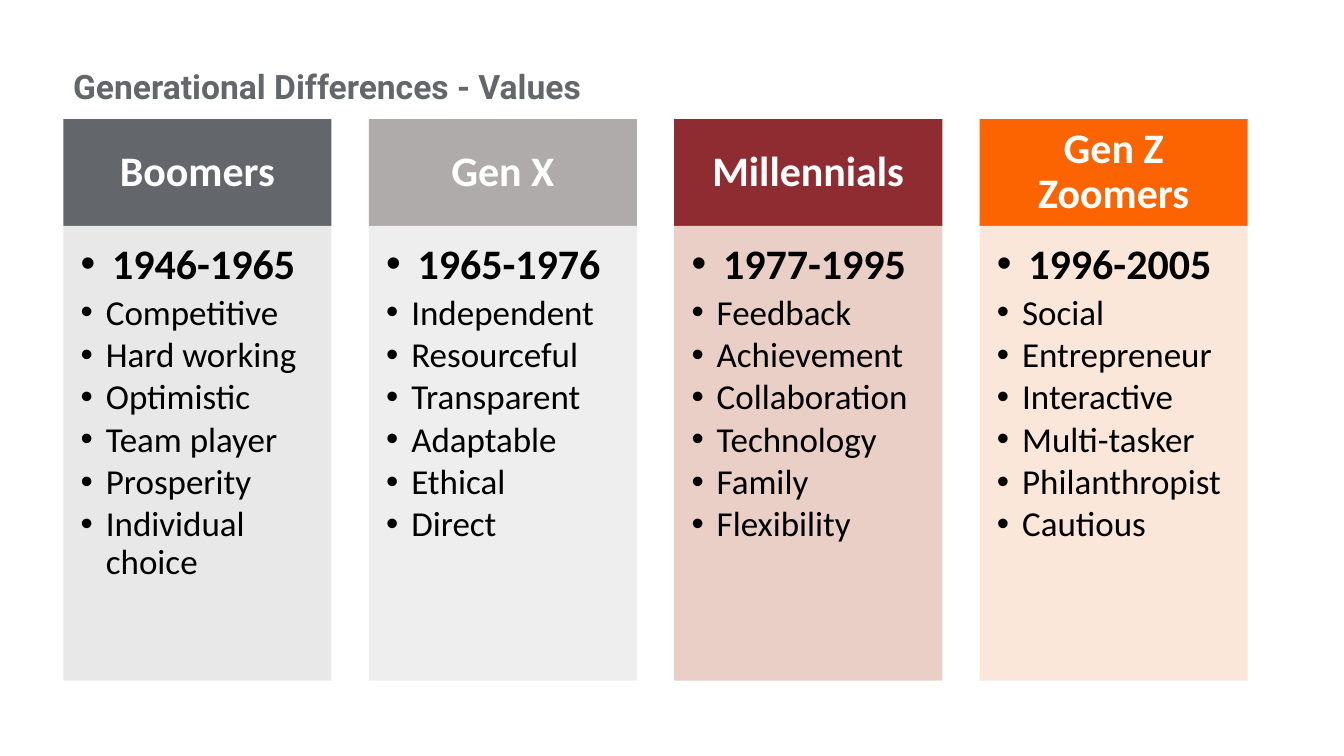
from dataclasses import dataclass
from typing import Any

from lxml.etree import SubElement as Sub
from pptx import Presentation as Deck
from pptx.dml.color import RGBColor as Rgb
from pptx.enum.shapes import MSO_SHAPE as Shape
from pptx.enum.text import MSO_ANCHOR as Anchor, MSO_AUTO_SIZE as Auto, PP_ALIGN as Align
from pptx.oxml.ns import qn
from pptx.util import Pt

HUES = {
    "slate": "63666A", "pearl": "E7E6E6",
    "stone": "AFABAB", "mist": "EDEDED",
    "wine": "8E2C31", "rose": "E7CABF",
    "orange": "FB6400", "peach": "FBE5D6",
    "white": "FFFFFF", "black": "000000",
}

# Column grid, in points
LEFT, STEP, WIDTH = 45.3, 218.15, 191.5
TOP, HEAD, BODY = 85, 76.4, 324.8

# Format values
TITLE = {"name": "Roboto", "size": Pt(24), "bold": True}
STRONG = {"name": "Calibri", "size": Pt(30), "bold": True}
PLAIN = {"name": "Calibri", "size": Pt(25), "bold": False}
LINE = {"line_spacing": 0.9, "space_before": Pt(0)}


@dataclass
class Group:
    name: str
    years: str
    traits: list[str]
    dark: str
    light: str


GROUPS = [
    Group("Boomers", "1946-1965",
          ["Competitive", "Hard working", "Optimistic", "Team player",
           "Prosperity", "Individual choice"], "slate", "pearl"),
    Group("Gen X", "1965-1976",
          ["Independent", "Resourceful", "Transparent", "Adaptable",
           "Ethical", "Direct"], "stone", "mist"),
    Group("Millennials", "1977-1995",
          ["Feedback", "Achievement", "Collaboration", "Technology",
           "Family", "Flexibility"], "wine", "rose"),
    Group("Gen Z Zoomers", "1996-2005",
          ["Social", "Entrepreneur", "Interactive", "Multi-tasker",
           "Philanthropist", "Cautious"], "orange", "peach"),
]


def apply(item: Any, values: dict[str, Any]) -> None:
    for key, value in values.items():
        setattr(item, key, value)


def pad(frame: Any, left: float, top: float, right: float, base: float) -> None:
    apply(frame, {"margin_left": Pt(left), "margin_top": Pt(top),
                  "margin_right": Pt(right), "margin_bottom": Pt(base),
                  "word_wrap": True, "auto_size": Auto.NONE})


def write(para: Any, text: str, font: dict[str, Any], hue: str,
          form: dict[str, Any]) -> None:
    apply(para, LINE | form)
    run = para.add_run()
    run.text = text
    apply(run.font, font)
    run.font.color.rgb = Rgb.from_string(HUES[hue])


def bullet(para: Any, indent: float) -> None:
    props = para._p.get_or_add_pPr()
    props.set("marL", str(Pt(indent)))
    props.set("indent", str(-Pt(indent)))
    Sub(props, qn("a:buFont"), typeface="Arial")
    Sub(props, qn("a:buChar"), char="•")


def block(slide: Any, left: float, top: float, height: float, hue: str) -> Any:
    box = slide.shapes.add_shape(Shape.RECTANGLE, Pt(left), Pt(top), Pt(WIDTH), Pt(height))
    box.shadow.inherit = False
    box.fill.solid()
    box.fill.fore_color.rgb = Rgb.from_string(HUES[hue])
    box.line.fill.background()
    return box


def column(slide: Any, left: float, group: Group) -> None:
    # Header with the group name
    head = block(slide, left, TOP, HEAD, group.dark).text_frame
    pad(head, 16.5, 9.4, 16.5, 9.4)
    head.vertical_anchor = Anchor.MIDDLE
    write(head.paragraphs[0], group.name, STRONG, "white", {"alignment": Align.CENTER})

    # Panel, slightly see-through
    panel = block(slide, left, TOP + HEAD, BODY, group.light)
    tint = panel.fill._xPr.find(".//" + qn("a:srgbClr"))
    Sub(tint, qn("a:alpha"), val="90000")

    # Years, then traits
    frame = panel.text_frame
    pad(frame, 12.4, 12.4, 16.5, 18.6)
    frame.vertical_anchor = Anchor.TOP
    for row, text in enumerate([group.years, *group.traits]):
        para = frame.add_paragraph() if row else frame.paragraphs[0]
        font, indent, gap = (PLAIN, 18, 3.25) if row else (STRONG, 22.5, 4.5)
        bullet(para, indent)
        write(para, text, font, "black",
              {"level": 1, "alignment": Align.LEFT, "space_after": Pt(gap)})


def main() -> None:
    deck = Deck()
    apply(deck, {"slide_width": Pt(960), "slide_height": Pt(540)})
    slide = deck.slides.add_slide(deck.slide_layouts[5])

    # Title
    title = slide.shapes.title
    apply(title, {"left": Pt(45), "top": Pt(46.8), "width": Pt(828), "height": Pt(33)})
    pad(title.text_frame, 7.2, 3.6, 7.2, 3.6)
    title.text_frame.vertical_anchor = Anchor.MIDDLE
    write(title.text_frame.paragraphs[0], "Generational Differences - Values",
          TITLE, "slate", {"alignment": Align.LEFT})

    # Columns
    for place, group in enumerate(GROUPS):
        column(slide, LEFT + place * STEP, group)

    deck.save("out.pptx")


if __name__ == "__main__":
    main()
